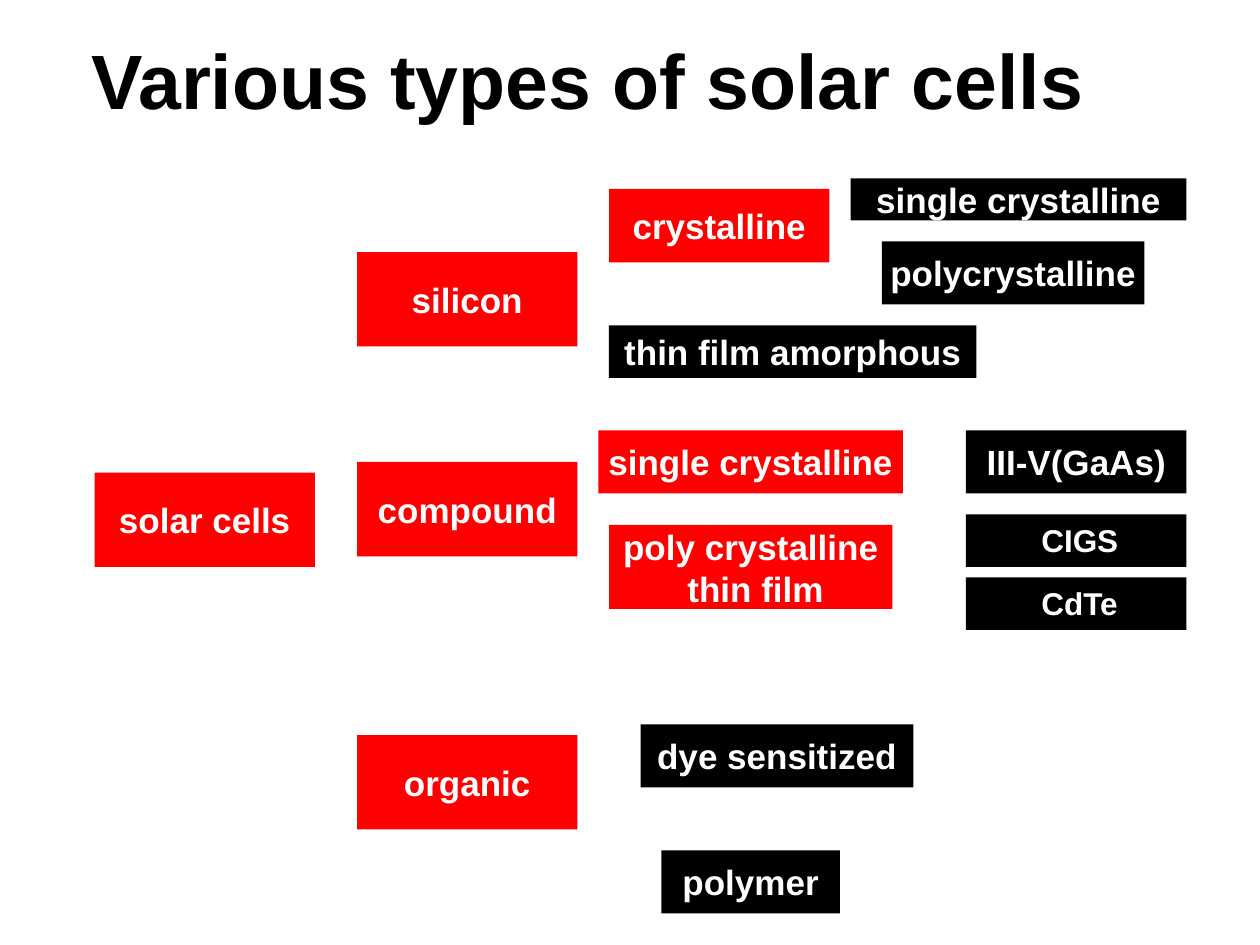
from pptx import Presentation
from pptx.dml.color import RGBColor
from pptx.enum.shapes import MSO_SHAPE as Shape
from pptx.enum.text import MSO_ANCHOR as Anchor, MSO_AUTO_SIZE as AutoSize, PP_ALIGN as Align
from pptx.util import Cm, Pt

COLORS = {"group": "FF0000", "type": "000000", "title": "000000", "label": "FFFFFF"}
GRID = 2.54 / 12  # the layout sits on a grid of twelve steps to 2.54 cm

# kind, text, left, top, width, height (in grid steps)
BOXES = [
    # Root and main families
    ("group", "solar cells", 9, 45, 21, 9),
    ("group", "silicon", 34, 24, 21, 9),
    ("group", "compound", 34, 44, 21, 9),
    ("group", "organic", 34, 70, 21, 9),
    # Silicon
    ("group", "crystalline", 58, 18, 21, 7),
    ("type", "thin film amorphous", 58, 31, 35, 5),
    ("type", "single crystalline", 81, 17, 32, 4),
    ("type", "polycrystalline", 84, 23, 25, 6),
    # Compound
    ("group", "single crystalline", 57, 41, 29, 6),
    ("group", "poly crystalline\n thin film", 58, 50, 27, 8),
    ("type", "III-V(GaAs)", 92, 41, 21, 6),
    # Organic
    ("type", "dye sensitized", 61, 69, 26, 6),
    ("type", "polymer", 63, 81, 17, 6),
]
THIN_FILMS = [("CIGS", 49), ("CdTe", 55)]  # text, top


def steps(*values):
    return [Cm(value * GRID) for value in values]


def write_text(shape, text, size, color, align):
    shape.text_frame.text = text
    for paragraph in shape.text_frame.paragraphs:
        paragraph.alignment = align
        font = paragraph.font
        font.name, font.size, font.bold = "Arial", Pt(size), True
        font.color.rgb = RGBColor.from_string(COLORS[color])


def add_title(slide, text):
    title = slide.shapes.title
    title.left, title.top, title.width, title.height = steps(2, 0, 108, 15)
    title.text_frame.vertical_anchor = Anchor.MIDDLE
    write_text(title, text, 44, "title", Align.CENTER)


def add_box(slide, kind, text, *place):
    box = slide.shapes.add_shape(Shape.RECTANGLE, *steps(*place))
    box.shadow.inherit = False
    box.fill.solid()
    box.fill.fore_color.rgb = RGBColor.from_string(COLORS[kind])
    box.line.fill.background()
    if text:
        box.text_frame.word_wrap = False
        box.text_frame.vertical_anchor = Anchor.MIDDLE
        write_text(box, text, 20, "label", Align.CENTER)


def add_label(slide, text, *place):
    label = slide.shapes.add_textbox(*steps(*place))
    label.text_frame.word_wrap = False
    label.text_frame.auto_size = AutoSize.SHAPE_TO_FIT_TEXT
    write_text(label, text, 18, "label", Align.LEFT)


def main():
    presentation = Presentation()
    presentation.slide_width, presentation.slide_height = Cm(25.4), Cm(19.05)
    slide = presentation.slides.add_slide(presentation.slide_layouts[5])

    add_title(slide, "Various types of solar cells")
    for box in BOXES:
        add_box(slide, *box)

    # Thin film compounds: a plain box with its label on top
    for text, top in THIN_FILMS:
        add_box(slide, "type", "", 92, top, 21, 5)
        add_label(slide, text, 98, top, 9.8, 4.8)

    presentation.save("out.pptx")


if __name__ == "__main__":
    main()
